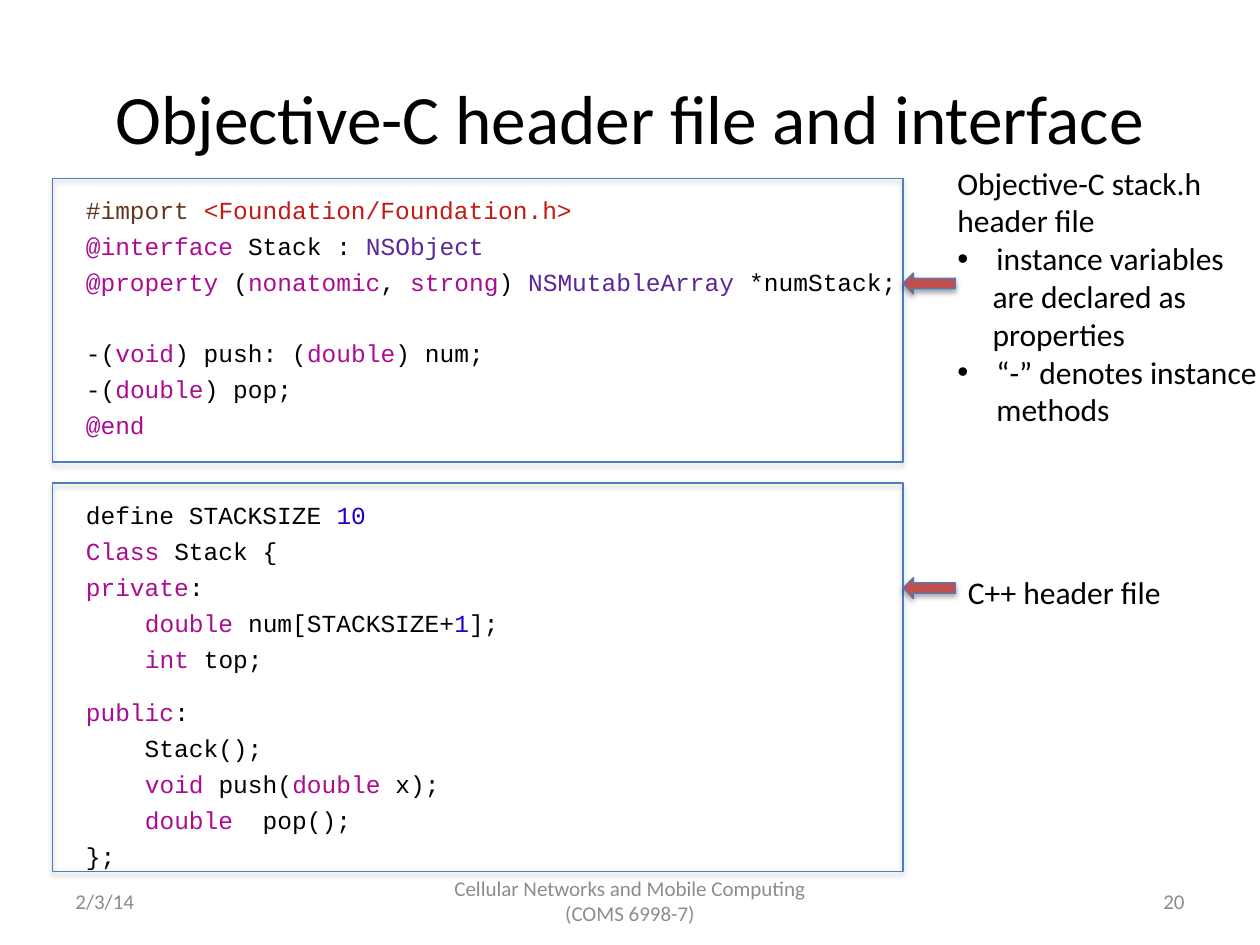
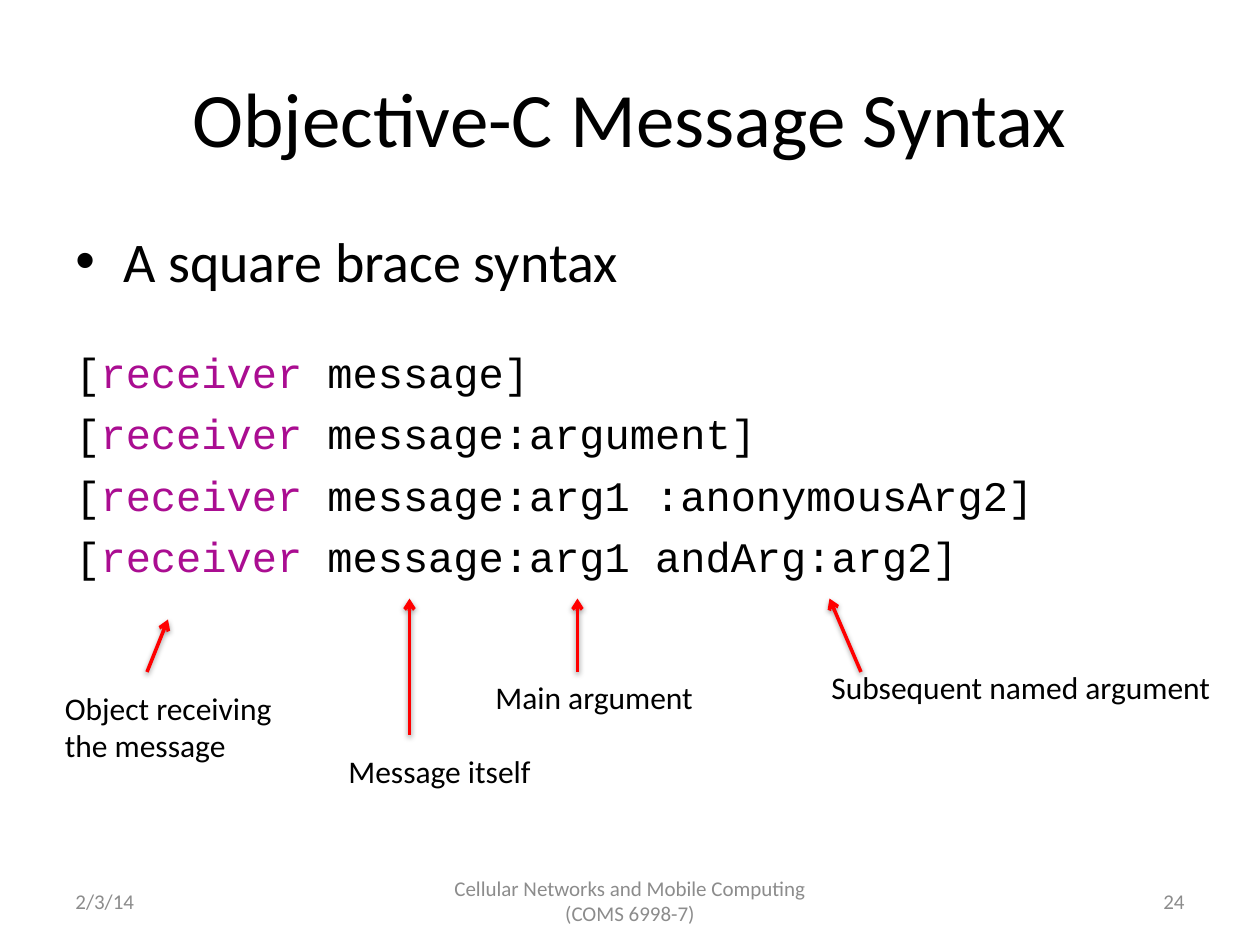
from dataclasses import dataclass
from typing import NamedTuple

from lxml import etree
from pptx import Presentation
from pptx import util as u
from pptx.dml.color import RGBColor
from pptx.enum import shapes, text
from pptx.oxml import ns

COLUMNS, ROWS = 120, 90
WIDTH, HEIGHT = u.Inches(10), u.Inches(7.5)
SANS, MONO = "Calibri", "Courier New"
COLORS = {
    "ink": "000000",
    "muted": "8C8C8C",
    "directive": "643820",
    "string": "C41A16",
    "keyword": "AA0D91",
    "type": "5C2699",
    "number": "1C00CF",
    "frame": "4B7EBC",
    "marker": "C0504D",
    "pointer": "FF0000",
}
LEFT, CENTER, RIGHT = text.PP_ALIGN.LEFT, text.PP_ALIGN.CENTER, text.PP_ALIGN.RIGHT
TOP, MIDDLE = text.MSO_ANCHOR.TOP, text.MSO_ANCHOR.MIDDLE


class Area(NamedTuple):
    column: float
    row: float
    columns: float
    rows: float


class Run(NamedTuple):
    words: str
    color: str = "ink"


@dataclass
class Line:
    runs: list[Run]
    size: float = 18
    font: str = SANS
    before: float = 0
    margin: float = 0
    bullet: bool = False
    align: text.PP_ALIGN = LEFT


class Callout(NamedTuple):
    area: Area
    words: list[str]
    start: tuple[float, float]
    tip: tuple[float, float]


def across(columns: float) -> int:
    return round(WIDTH * columns / COLUMNS)


def down(rows: float) -> int:
    return round(HEIGHT * rows / ROWS)


def place(area: Area) -> tuple[int, int, int, int]:
    return across(area.column), down(area.row), across(area.columns), down(area.rows)


def rgb(color: str) -> RGBColor:
    return RGBColor.from_string(COLORS[color])


def plain(words: str, **style) -> Line:
    return Line([Run(words, style.pop("color", "ink"))], **style)


def code(rows: list[list[Run]], size: float, before: float, gaps: dict[int, float]) -> list[Line]:
    return [Line(runs, size, MONO, gaps.get(number, before)) for number, runs in enumerate(rows)]


def write(frame, lines: list[Line]) -> None:
    for number, line in enumerate(lines):
        paragraph = frame.paragraphs[0] if number == 0 else frame.add_paragraph()
        properties = paragraph._p.get_or_add_pPr()
        if line.margin:
            properties.set("marL", str(u.Inches(line.margin)))
        if line.bullet:
            properties.set("indent", str(-u.Inches(line.margin)))
            etree.SubElement(properties, ns.qn("a:buFont"), typeface="Arial")
            etree.SubElement(properties, ns.qn("a:buChar"), char="•")
        paragraph.alignment = line.align
        paragraph.space_before = u.Pt(line.before if number else 0)
        for words, color in line.runs:
            run = paragraph.add_run()
            run.text = words
            run.font.name = line.font
            run.font.size = u.Pt(line.size)
            run.font.color.rgb = rgb(color)


def add_text(slide, area: Area, lines: list[Line], anchor=TOP, wrap: bool = True):
    frame = slide.shapes.add_textbox(*place(area)).text_frame
    frame.word_wrap = wrap
    frame.vertical_anchor = anchor
    write(frame, lines)
    return frame


def cast_shadow(properties, opacity: int, distance: float) -> None:
    effects = properties.find(ns.qn("a:effectLst"))
    if effects is None:
        effects = etree.SubElement(properties, ns.qn("a:effectLst"))
    shadow = etree.SubElement(
        effects, ns.qn("a:outerShdw"), blurRad=str(u.Pt(3.1)),
        dist=str(u.Pt(distance)), dir="5400000", rotWithShape="0")
    black = etree.SubElement(shadow, ns.qn("a:srgbClr"), val=COLORS["ink"])
    etree.SubElement(black, ns.qn("a:alpha"), val=str(opacity * 1000))


def add_outlined(slide, kind: shapes.MSO_SHAPE, area: Area, fill: str = "") -> None:
    shape = slide.shapes.add_shape(kind, *place(area))
    if fill:
        shape.fill.solid()
        shape.fill.fore_color.rgb = rgb(fill)
    else:
        shape.fill.background()
    shape.line.color.rgb = rgb("frame")
    shape.line.width = u.Pt(0.75)
    shape.shadow.inherit = False
    cast_shadow(shape._element.spPr, 35, 1.8)


def add_callout(slide, callout: Callout) -> None:
    add_text(slide, callout.area, [plain(words) for words in callout.words], wrap=False)
    (x1, y1), (x2, y2) = callout.start, callout.tip
    pointer = slide.shapes.add_connector(
        shapes.MSO_CONNECTOR.STRAIGHT, across(x1), down(y1), across(x2), down(y2))
    pointer.line.color.rgb = rgb("pointer")
    pointer.line.width = u.Pt(2)
    etree.SubElement(pointer.line._get_or_add_ln(), ns.qn("a:tailEnd"), type="arrow")
    cast_shadow(pointer._element.spPr, 38, 1.6)


def add_slide(deck, heading: str, size: float, page: str):
    slide = deck.slides.add_slide(deck.slide_layouts[5])
    title = slide.shapes.title
    title.left, title.top, title.width, title.height = place(Area(6, 3.6, 108, 15))
    title.text_frame.auto_size = text.MSO_AUTO_SIZE.NONE
    title.text_frame.vertical_anchor = MIDDLE
    write(title.text_frame, [plain(heading, size=size, align=CENTER)])
    footers = [
        (6, 28, "2/3/14", LEFT),
        (41, 38, "Cellular Networks and Mobile Computing (COMS 6998-7)", CENTER),
        (86, 28, page, RIGHT),
    ]
    for column, columns, words, align in footers:
        footer = plain(words, size=12, color="muted", align=align)
        add_text(slide, Area(column, 83.4, columns, 4.8), [footer], MIDDLE)
    return slide


OBJECTIVE_C = [
    [Run("#import ", "directive"), Run("<Foundation/Foundation.h>", "string")],
    [Run("@interface", "keyword"), Run(" Stack : "), Run("NSObject", "type")],
    [Run("@property", "keyword"), Run(" ("), Run("nonatomic", "keyword"), Run(", "),
     Run("strong", "keyword"), Run(") "), Run("NSMutableArray", "type"), Run(" *numStack;")],
    [Run("-("), Run("void", "keyword"), Run(") push: ("), Run("double", "keyword"), Run(") num;")],
    [Run("-("), Run("double", "keyword"), Run(") pop;")],
    [Run("@end", "keyword")],
]
CPP = [
    [Run("define STACKSIZE "), Run("10", "number")],
    [Run("Class", "keyword"), Run(" Stack {")],
    [Run("private", "keyword"), Run(":")],
    [Run("    "), Run("double ", "keyword"), Run("num[STACKSIZE+"), Run("1", "number"), Run("];")],
    [Run("    "), Run("int", "keyword"), Run(" top;")],
    [Run("public", "keyword"), Run(":")],
    [Run("    Stack();")],
    [Run("    "), Run("void", "keyword"), Run(" push("), Run("double", "keyword"), Run(" x);")],
    [Run("    "), Run("double", "keyword"), Run("  pop();")],
    [Run("};")],
]
HEADER_NOTES = [
    plain("Objective-C stack.h header file"),
    plain("instance variables", margin=0.31, bullet=True),
    plain("are declared as", margin=0.28),
    plain("properties", margin=0.28),
    plain("“-” denotes instance methods", margin=0.31, bullet=True),
]
MESSAGES = ["message]", "message:argument]", "message:arg1 :anonymousArg2]",
            "message:arg1 andArg:arg2]"]
CALLOUTS = [
    Callout(Area(5, 65, 22.3, 8.5), ["Object receiving", "the message"], (14, 64), (16, 59)),
    Callout(Area(46, 64, 21.5, 4.8), ["Main argument"], (55, 64), (55, 57)),
    Callout(Area(78, 63, 39, 4.8), ["Subsequent named argument"], (82, 64), (79, 57)),
    Callout(Area(32, 71, 20, 4.8), ["Message itself"], (39, 70), (39, 57)),
]


def build_header_files(deck) -> None:
    slide = add_slide(deck, "Objective-C header file and interface", 39.6, "20")
    add_text(slide, Area(7, 18, 90, 27), code(OBJECTIVE_C, 14, 3.75, {3: 23.5}))
    add_text(slide, Area(7, 47, 79, 38), code(CPP, 14, 3.75, {5: 13.75}))
    for row, rows in ((17, 27), (46, 37)):
        add_outlined(slide, shapes.MSO_SHAPE.RECTANGLE, Area(5, row, 81, rows))
        add_outlined(slide, shapes.MSO_SHAPE.LEFT_ARROW, Area(86, row + 9, 5, 2), "marker")
    notes = add_text(slide, Area(90, 15, 30, 26.6), HEADER_NOTES)
    notes.margin_right = 0
    add_text(slide, Area(91, 54, 21, 4.8), [plain("C++ header file")], wrap=False)


def build_message_syntax(deck) -> None:
    slide = add_slide(deck, "Objective-C Message Syntax", 44, "24")
    rows = [[Run("["), Run("receiver ", "keyword"), Run(message)] for message in MESSAGES]
    syntax = plain("A square brace syntax", size=32, margin=0.38, bullet=True)
    add_text(slide, Area(6, 21, 108, 59.4), [syntax, *code(rows, 24, 6.3, {0: 30})])
    for callout in CALLOUTS:
        add_callout(slide, callout)


def main() -> None:
    deck = Presentation()
    deck.slide_width, deck.slide_height = WIDTH, HEIGHT
    build_header_files(deck)
    build_message_syntax(deck)
    deck.save("out.pptx")


if __name__ == "__main__":
    main()
